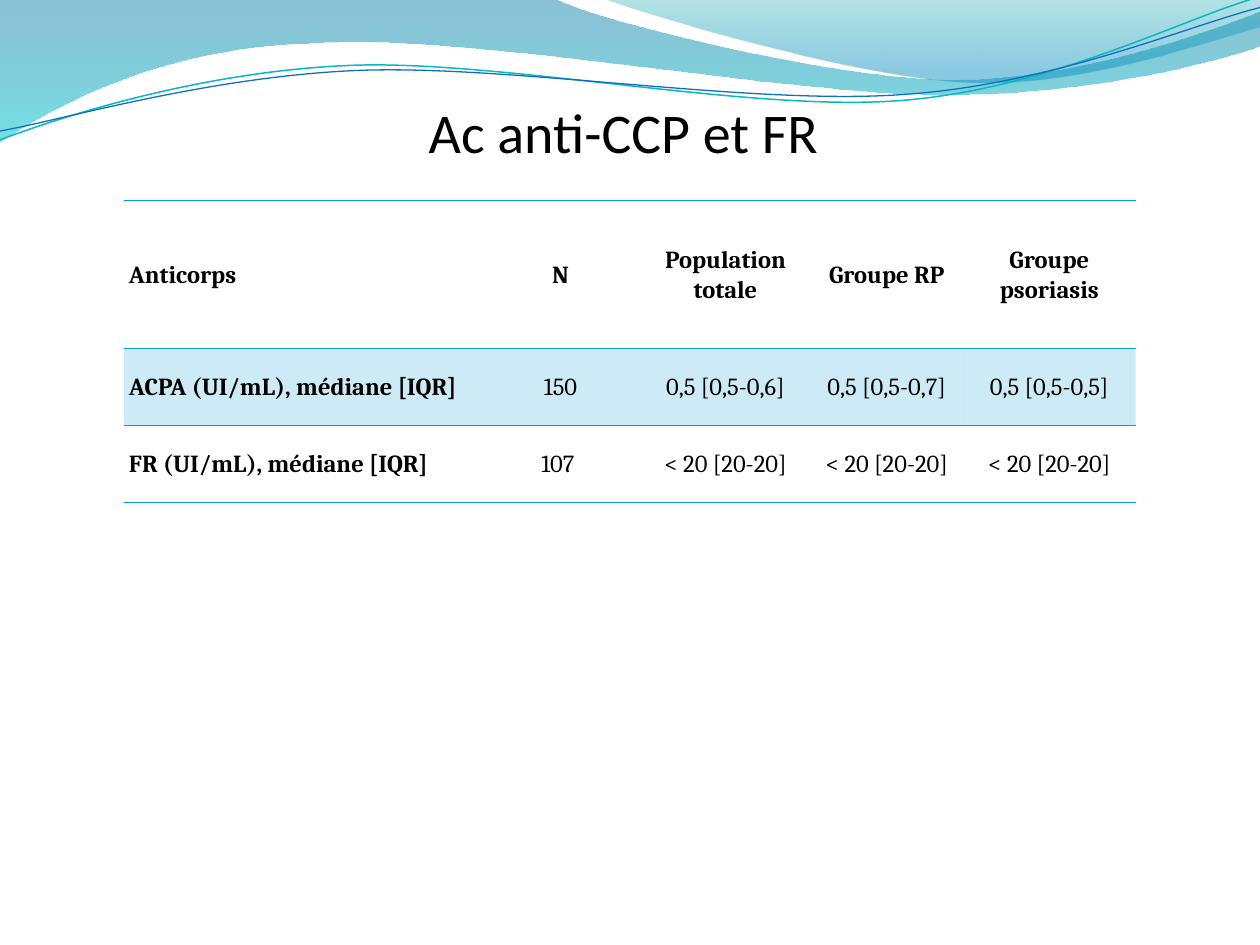
"""Build a slide with a wave banner, a title and an antibody table."""
from lxml import etree
from pptx import Presentation
from pptx.dml.color import RGBColor
from pptx.enum.text import MSO_ANCHOR, PP_ALIGN
from pptx.oxml.ns import qn
from pptx.util import Inches, Pt

CENTER, LEFT = PP_ALIGN.CENTER, PP_ALIGN.LEFT
MIDDLE, BOTTOM = MSO_ANCHOR.MIDDLE, MSO_ANCHOR.BOTTOM
COLUMNS, ROWS = 100, 75
PLAIN_TABLE_STYLE = "{2D5ABB26-0587-4C30-8999-92F81FD0307C}"
COLORS = {
    "text": "000000", "accent": "009DD9",
    "deep blue": "0074A1", "turquoise": "00C6CF",
    "teal": "00A1A9", "sky": "008BBF",
    "teal line": "0AB8BF", "blue line": "0F6FC6",
}

WAVES = [
    ([(0, 0), (44, -0.1), (47.6, 1.7, 66.4, 6.3, 75.8, 6.3),
      (85.3, 6.3, 95.8, 2.6, 100, 0.9), (100.1, 3.6),
      (98.3, 4.4, 87, 7.6, 74.6, 7.5), (62.2, 7.5, 38.2, 2.8, 25.7, 3.4),
      (12.9, 3.6, 4.6, 8.3, -0.1, 11.3), (0, 0)],
     [("deep blue", 0, 45), ("turquoise", 1, 55)]),
    ([(47.9, -0.1), (50.9, 1.1, 68.2, 6.2, 76.9, 6.5),
      (85.6, 6.9, 96.1, 3.2, 100, 2.1), (100, 0), (47.9, -0.1)],
     [("teal", 0, 30), ("sky", 0.8, 45)]),
]
STRANDS = [
    ([(0, 11.1), (4.8, 9.3, 15.8, 5.7, 27.7, 5.2),
      (39.5, 4.7, 59.3, 8.9, 71.3, 8), (83.3, 7.1, 93.8, 1.5, 99.8, -0.2)],
     "teal line", 0.85),
    ([(0, 10.4), (4.7, 9.6, 16.4, 6.1, 28.3, 5.6),
      (40.3, 5.1, 59.7, 8.4, 71.7, 7.5), (83.6, 6.7, 94.1, 2.1, 100, 0.6)],
     "blue line", 0.75),
]
ANTIBODIES = [
    ["Anticorps", "N", "Population totale", "Groupe RP", "Groupe psoriasis"],
    ["ACPA (UI/mL), médiane [IQR]", "150", "0,5 [0,5-0,6]", "0,5 [0,5-0,7]",
     "0,5 [0,5-0,5]"],
    ["FR (UI/mL), médiane [IQR]", "107 "] + ["< 20 [20-20]"] * 3,
]


def set_alpha(color_element, percent):
    """Make a colour element partly transparent."""
    etree.SubElement(color_element, qn("a:alpha"), val=str(percent * 1000))


class SlideBuilder:
    """Hold the style and the current slide, measured on a grid."""

    def __init__(self, presentation):
        self.slide = presentation.slides.add_slide(presentation.slide_layouts[6])
        self.column = presentation.slide_width / COLUMNS
        self.row = presentation.slide_height / ROWS

    def place(self, left, top, width, height):
        """Convert a grid box to slide lengths."""
        return (round(left * self.column), round(top * self.row),
                round(width * self.column), round(height * self.row))

    def outline(self, path, close):
        """Draw a freeform whose six-number parts are cubic curves."""
        points = [(part[i] * self.column, part[i + 1] * self.row)
                  for part in path for i in range(0, len(part), 2)]
        builder = self.slide.shapes.build_freeform(*points[0], scale=1.0)
        builder.add_line_segments(points[1:], close=close)
        shape = builder.convert_to_shape()
        shape.shadow.inherit = False
        segments = iter(list(shape._element.iter(qn("a:lnTo"))))
        for part in path[1:]:
            segment = next(segments)
            if len(part) == 6:
                curve = etree.Element(qn("a:cubicBezTo"))
                segment.addprevious(curve)
                for line in (segment, next(segments), next(segments)):
                    curve.append(line[0])
                    line.getparent().remove(line)
        return shape

    def wave(self, path, stops):
        """Draw a closed wave with a see-through vertical gradient."""
        shape = self.outline(path, True)
        shape.line.fill.background()
        shape.fill.gradient()
        shape.fill.gradient_angle = 270
        for stop, (color, position, _) in zip(shape.fill.gradient_stops, stops):
            stop.color.rgb = RGBColor.from_string(COLORS[color])
            stop.position = position
        gradient = shape._element.spPr.find(qn("a:gradFill"))
        for element, (_, _, alpha) in zip(gradient.iter(qn("a:srgbClr")), stops):
            set_alpha(element, alpha)

    def strand(self, path, color, width):
        """Draw an open curved line."""
        shape = self.outline(path, False)
        shape.fill.background()
        shape.line.color.rgb = RGBColor.from_string(COLORS[color])
        shape.line.width = Pt(width)

    def style(self, paragraph, font, size, bold, alignment):
        """Set the font and alignment of a paragraph."""
        paragraph.alignment = alignment
        paragraph.font.name = font
        paragraph.font.size = Pt(size)
        paragraph.font.bold = bold
        paragraph.font.color.rgb = RGBColor.from_string(COLORS["text"])

    def title(self, text, box):
        """Add the slide title."""
        frame = self.slide.shapes.add_textbox(*self.place(*box)).text_frame
        frame.word_wrap = True
        frame.vertical_anchor = BOTTOM
        frame.margin_left = frame.margin_right = frame.margin_bottom = 0
        frame.text = text
        self.style(frame.paragraphs[0], "Calibri", 32, False, CENTER)

    def border(self, cell, side):
        """Rule one side of a cell."""
        line = etree.Element(qn(f"a:{side}"), w=str(Pt(1)), cap="flat",
                             cmpd="sng", algn="ctr")
        fill = etree.SubElement(line, qn("a:solidFill"))
        etree.SubElement(fill, qn("a:srgbClr"), val=COLORS["accent"])
        etree.SubElement(line, qn("a:prstDash"), val="solid")
        cell._tc.get_or_add_tcPr().insert(0, line)

    def cell(self, cell, text, bold, alignment, banded):
        """Fill in one table cell."""
        cell.text = text
        cell.vertical_anchor = MIDDLE
        cell.margin_left = cell.margin_right = Inches(0.04)
        cell.margin_top = cell.margin_bottom = 0
        paragraph = cell.text_frame.paragraphs[0]
        paragraph.line_spacing = 1.07
        self.style(paragraph, "Cambria", 14, bold, alignment)
        if banded:
            cell.fill.solid()
            cell.fill.fore_color.rgb = RGBColor.from_string(COLORS["accent"])
            set_alpha(next(cell._tc.tcPr.iter(qn("a:srgbClr"))), 20)
        else:
            cell.fill.background()

    def table(self, values, left, top, widths, heights):
        """Add a table with ruled header and foot and a tinted odd row."""
        box = self.place(left, top, sum(widths), sum(heights))
        frame = self.slide.shapes.add_table(len(values), len(widths), *box)
        table = frame.table
        table.first_row = table.horz_banding = False
        next(frame._element.iter(qn("a:tableStyleId"))).text = PLAIN_TABLE_STYLE
        for column, width in zip(table.columns, widths):
            column.width = round(width * self.column)
        for row, height in zip(table.rows, heights):
            row.height = round(height * self.row)
        for i, texts in enumerate(values):
            for j, text in enumerate(texts):
                cell = table.cell(i, j)
                self.cell(cell, text, i == 0 or j == 0, CENTER if j else LEFT, i % 2)
                if i in (0, len(values) - 1):
                    self.border(cell, "lnB")
                if i < 2:
                    self.border(cell, "lnT")


def main():
    """Build and save the slide."""
    presentation = Presentation()
    presentation.slide_width, presentation.slide_height = Inches(10), Inches(7.5)
    builder = SlideBuilder(presentation)
    for wave in WAVES:
        builder.wave(*wave)
    for strand in STRANDS:
        builder.strand(*strand)
    builder.title("Ac anti-CCP et FR ", (5, 0.6, 90, 12.5))
    builder.table(ANTIBODIES, 9.84, 15.92, [28.3, 12.7, 13.5, 12.1, 13.7],
                  [11.74, 6.11, 6.11])
    presentation.save("out.pptx")


if __name__ == "__main__":
    main()
